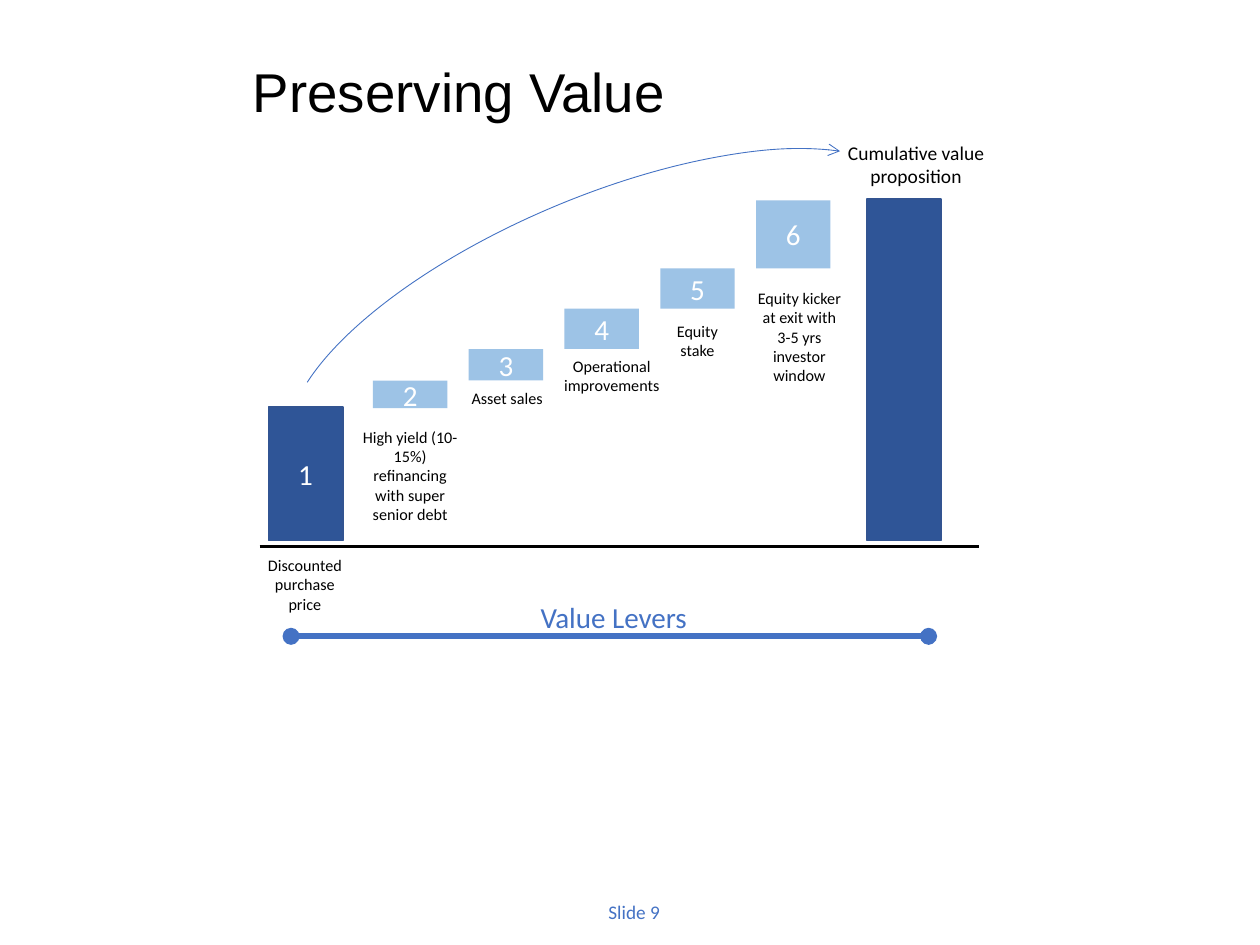
import pptx
import pptx.dml.color
import pptx.enum.shapes
import pptx.enum.text
import pptx.oxml
import pptx.oxml.ns
import pptx.util

RGBColor = pptx.dml.color.RGBColor
SHAPES = pptx.enum.shapes.MSO_SHAPE
ALIGN = pptx.enum.text.PP_ALIGN
ANCHOR = pptx.enum.text.MSO_ANCHOR

BLACK = RGBColor(0x00, 0x00, 0x00)
WHITE = RGBColor(0xFF, 0xFF, 0xFF)
NAVY = RGBColor(0x2F, 0x55, 0x97)
NAVY_EDGE = RGBColor(0x32, 0x54, 0x91)
SKY = RGBColor(0x9D, 0xC3, 0xE6)
BLUE = RGBColor(0x44, 0x72, 0xC4)

WIDTH, HEIGHT = pptx.util.Inches(10), pptx.util.Inches(7.5)
COL, ROW = WIDTH / 100, HEIGHT / 75  # grid of 100 columns by 75 rows

BAR_WIDTH = 5.9
LEVER_PITCH = 7.6
LABEL_SIZE = 9.2
HEADING_SIZE = 16.6

# number, rise, label, label width, label shift right, label gap below the bar
LEVERS = [
    ("2", 2.2, "High yield (10-15%) refinancing with super senior debt", 9.6, 0, 1),
    ("3", 2.5, "Asset sales", 9.6, 0.1, 0.1),
    ("4", 3.2, "Operational improvements", 10.1, 0.8, 0.1),
    ("5", 3.2, "Equity stake", 7.5, 0, 0.5),
    ("6", 5.4, "Equity kicker at exit with 3-5 yrs investor window", 9, 0.5, 1.1),
]


def place(left, top, width, height):
    """Turn grid columns and rows into slide lengths."""
    return round(left * COL), round(top * ROW), round(width * COL), round(height * ROW)


def write(frame, text, size=LABEL_SIZE, color=BLACK, font="Calibri",
          align=ALIGN.CENTER, anchor=ANCHOR.TOP, spacing=None):
    frame.word_wrap = True
    frame.vertical_anchor = anchor
    paragraph = frame.paragraphs[0]
    paragraph.alignment = align
    paragraph.line_spacing = spacing
    run = paragraph.add_run()
    run.text = text
    run.font.name = font
    run.font.size = pptx.util.Pt(size)
    run.font.color.rgb = color


def add_text(slide, box, text, **style):
    write(slide.shapes.add_textbox(*place(*box)).text_frame, text, **style)


def add_bar(slide, box, fill, edge=None, number=None):
    bar = slide.shapes.add_shape(SHAPES.RECTANGLE, *place(*box))
    bar.shadow.inherit = False
    bar.fill.solid()
    bar.fill.fore_color.rgb = fill
    if edge is None:
        bar.line.fill.background()
    else:
        bar.line.color.rgb = edge
        bar.line.width = pptx.util.Pt(1)
    if number:
        write(bar.text_frame, number, size=HEADING_SIZE, color=WHITE, anchor=ANCHOR.MIDDLE)


def style_line(line, color, width, **ends):
    line.color.rgb = color
    line.width = pptx.util.Pt(width)
    for end in ("headEnd", "tailEnd"):
        if end in ends:
            mark = pptx.oxml.parse_xml(
                f'<a:{end} {pptx.oxml.ns.nsdecls("a")} type="{ends[end]}"/>')
            line._get_or_add_ln().append(mark)


def add_rule(slide, left, right, top, color, width, **ends):
    x1, y, span, _ = place(left, top, right - left, 0)
    rule = slide.shapes.add_connector(
        pptx.enum.shapes.MSO_CONNECTOR.STRAIGHT, x1, y, x1 + span, y)
    style_line(rule.line, color, width, **ends)
    rule._element.spPr.append(
        pptx.oxml.parse_xml(f'<a:effectLst {pptx.oxml.ns.nsdecls("a")}/>'))


def add_growth_arc(slide, box):
    arc = slide.shapes.add_shape(SHAPES.ARC, *place(*box))
    arc.shadow.inherit = False
    arc.fill.background()
    arc.adjustments[0] = 170.21
    arc.adjustments[1] = 46.79
    arc.rotation = 67.2
    arc._element.spPr.xfrm.set("flipH", "1")
    style_line(arc.line, BLUE, 0.5, headEnd="arrow")


def add_levers(slide, left, bottom):
    """Stack each lever on top of the one before, one pitch to the right."""
    for index, (number, rise, label, width, shift, gap) in enumerate(LEVERS):
        x = left + index * LEVER_PITCH
        add_bar(slide, (x, bottom - rise, BAR_WIDTH, rise), SKY, number=number)
        label_left = x + (BAR_WIDTH - width) / 2 + shift
        add_text(slide, (label_left, bottom + gap, width, 4.1), label)
        bottom -= rise


def add_waterfall(slide, box):
    left, top, width, height = box
    base = top + height
    add_rule(slide, left - 0.7, left + width + 3, base + 0.5, BLACK, 1.5)
    add_bar(slide, (left, base - 10.6, BAR_WIDTH, 10.6), NAVY, NAVY_EDGE, number="1")
    add_text(slide, (left - 1.9, base + 0.7, 9.6, 5.7), "Discounted purchase price")
    add_levers(slide, left + 8.3, base - 10.5)
    add_bar(slide, (left + width - BAR_WIDTH, top, BAR_WIDTH, height), NAVY, NAVY_EDGE)
    add_text(slide, (left + width - 10.1, top - 5.1, 16.2, 4.7),
             "Cumulative value proposition", size=11.1)
    add_growth_arc(slide, (left + 16.4, top - 16.8, 20.5, 53.7))


def add_lever_span(slide, box):
    left, top, width, height = box
    add_rule(slide, left, left + width, top + height, BLUE, 3.25,
             headEnd="oval", tailEnd="oval")
    add_text(slide, (left + 17.5, top, 16.2, 3.8), "Value Levers",
             size=HEADING_SIZE, color=BLUE)


def main():
    deck = pptx.Presentation()
    deck.slide_width, deck.slide_height = WIDTH, HEIGHT
    slide = deck.slides.add_slide(deck.slide_layouts[6])
    add_text(slide, (19.1, 2.6, 75, 9.8), "Preserving Value", size=31.2, font="Arial",
             align=ALIGN.LEFT, anchor=ANCHOR.MIDDLE, spacing=0.9)
    add_waterfall(slide, (21.3, 15.8, 53.4, 27.1))
    add_lever_span(slide, (23.1, 47.1, 50.6, 3.4))
    add_text(slide, (47.3, 71, 24.4, 4), "Slide 9", size=11, color=BLUE, align=ALIGN.LEFT)
    deck.save("out.pptx")


if __name__ == "__main__":
    main()
